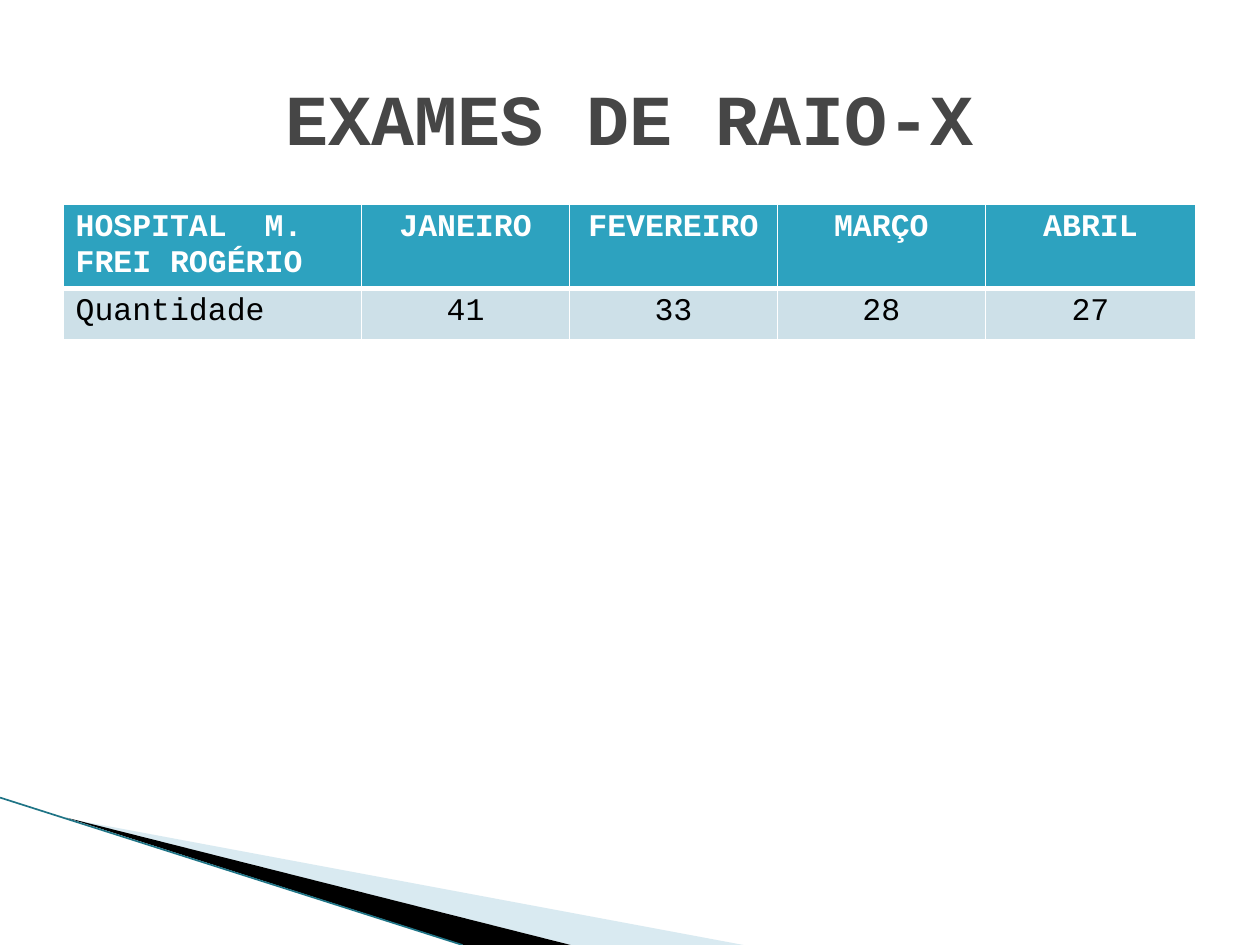
from dataclasses import dataclass

from lxml.etree import SubElement
from pptx import Presentation
from pptx.dml.color import RGBColor
from pptx.enum.shapes import MSO_CONNECTOR
from pptx.enum.text import MSO_ANCHOR, PP_ALIGN
from pptx.oxml.ns import qn
from pptx.util import Inches, Pt


@dataclass(frozen=True)
class Theme:
    font: str = "Courier New"
    title_size: float = 41
    table_size: float = 18
    title: str = "464646"
    header: str = "2DA2BF"
    body: str = "CDE0E8"
    white: str = "FFFFFF"
    black: str = "000000"
    pale_wedge: str = "A0CBDC"
    edge: str = "1F7486"


def write_text(frame, text, *, font, size, color, bold=False, align=PP_ALIGN.LEFT):
    paragraph = frame.paragraphs[0]
    paragraph.alignment = align
    run = paragraph.add_run()
    run.text = text
    run.font.name = font
    run.font.size = Pt(size)
    run.font.bold = bold
    run.font.color.rgb = RGBColor.from_string(color)


def set_border(cell, side, color, width):
    line = SubElement(cell._tc.get_or_add_tcPr(), qn(f"a:ln{side}"), w=str(Pt(width)))
    fill = SubElement(line, qn("a:solidFill"))
    SubElement(fill, qn("a:srgbClr"), val=color)


class SlideBuilder:
    def __init__(self, slide, theme):
        self.slide = slide
        self.theme = theme

    def wedge(self, points, color, opacity=100):
        corners = [(Inches(x), Inches(y)) for x, y in points]
        builder = self.slide.shapes.build_freeform(*corners[0])
        builder.add_line_segments(corners[1:], close=True)
        wedge = builder.convert_to_shape()
        wedge.shadow.inherit = False
        wedge.line.fill.background()
        wedge.fill.solid()
        wedge.fill.fore_color.rgb = RGBColor.from_string(color)
        if opacity < 100:
            tint = wedge._element.spPr.find(qn("a:solidFill"))[0]
            SubElement(tint, qn("a:alpha"), val=str(opacity * 1000))

    def line(self, start, end, color, width):
        ends = [Inches(value) for value in (*start, *end)]
        edge = self.slide.shapes.add_connector(MSO_CONNECTOR.STRAIGHT, *ends)
        edge.line.color.rgb = RGBColor.from_string(color)
        edge.line.width = Pt(width)
        SubElement(edge._element.spPr, qn("a:effectLst"))

    def title(self, text, left, top, width, height):
        box = self.slide.shapes.add_textbox(
            Inches(left), Inches(top), Inches(width), Inches(height))
        frame = box.text_frame
        frame.word_wrap = True
        frame.vertical_anchor = MSO_ANCHOR.MIDDLE
        write_text(frame, text, font=self.theme.font, size=self.theme.title_size,
                   color=self.theme.title, bold=True, align=PP_ALIGN.CENTER)

    def table(self, rows, left, top, widths, heights):
        table = self.slide.shapes.add_table(
            len(rows), len(widths), Inches(left), Inches(top),
            Inches(sum(widths)), Inches(sum(heights))).table
        for column, width in zip(table.columns, widths):
            column.width = Inches(width)
        for row, height in zip(table.rows, heights):
            row.height = Inches(height)
        for r, row in enumerate(rows):
            for c, text in enumerate(row):
                self.table_cell(table.cell(r, c), text, r == 0, c == 0)

    def table_cell(self, cell, text, is_header, is_label):
        theme = self.theme
        # A thick rule separates the header from the body
        top, bottom = (1, 3) if is_header else (3, 1)
        for side, width in zip("LRTB", (1, 1, top, bottom)):
            set_border(cell, side, theme.white, width)
        cell.fill.solid()
        cell.fill.fore_color.rgb = RGBColor.from_string(
            theme.header if is_header else theme.body)
        write_text(cell.text_frame, text, font=theme.font, size=theme.table_size,
                   color=theme.white if is_header else theme.black, bold=is_header,
                   align=PP_ALIGN.LEFT if is_label else PP_ALIGN.CENTER)


def main():
    presentation = Presentation()
    presentation.slide_width = Inches(10)
    presentation.slide_height = Inches(7.5)
    theme = Theme()
    slide = presentation.slides.add_slide(presentation.slide_layouts[6])
    page = SlideBuilder(slide, theme)

    # Corner decoration
    page.wedge([(0.55, 6.5), (5.9, 7.5), (4.53, 7.5)], theme.pale_wedge, opacity=40)
    page.wedge([(0.53, 6.49), (4.53, 7.5), (3.68, 7.5)], theme.black)
    page.line((0, 6.33), (3.67, 7.5), theme.edge, 0.95)

    # Monthly exam counts
    exams = [
        ["HOSPITAL  M. FREI ROGÉRIO", "JANEIRO", "FEVEREIRO", "MARÇO", "ABRIL"],
        ["Quantidade", "41", "33", "28", "27"],
    ]
    page.table(exams, 0.5, 1.62, widths=[2.37] + [1.65] * 3 + [1.67],
               heights=[0.66, 0.41])

    # Title
    page.title("EXAMES DE RAIO-X", 0.5, 0.3, 9, 1.25)

    presentation.save("out.pptx")


if __name__ == "__main__":
    main()
